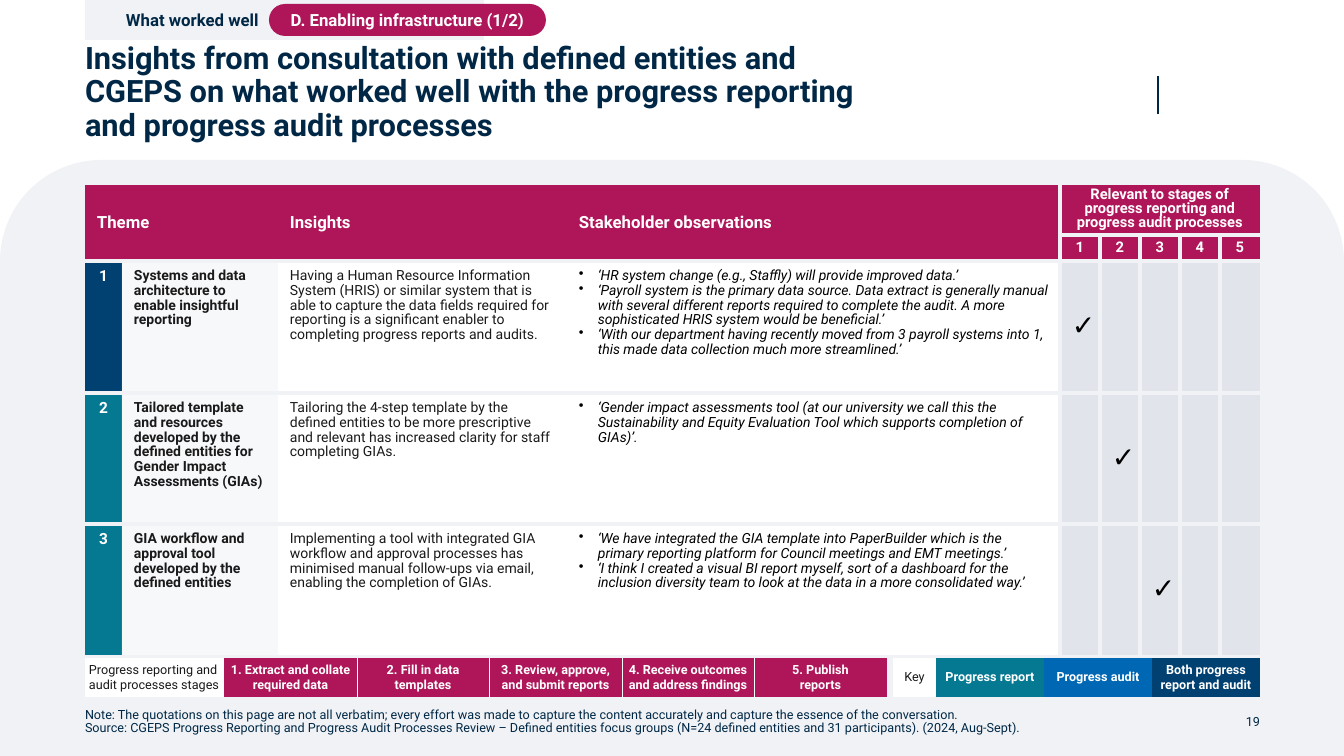
from dataclasses import dataclass

from lxml import etree
from pptx import Presentation
from pptx.dml.color import RGBColor
from pptx.enum.shapes import MSO_CONNECTOR, MSO_SHAPE
from pptx.enum.text import MSO_ANCHOR, MSO_AUTO_SIZE, PP_ALIGN
from pptx.oxml.ns import qn
from pptx.util import Emu, Pt

LEFT, CENTER, RIGHT = PP_ALIGN.LEFT, PP_ALIGN.CENTER, PP_ALIGN.RIGHT
TOP, MIDDLE = MSO_ANCHOR.TOP, MSO_ANCHOR.MIDDLE
RECT, PILL = MSO_SHAPE.RECTANGLE, MSO_SHAPE.ROUNDED_RECTANGLE
PANEL = MSO_SHAPE.ROUND_2_SAME_RECTANGLE
STRAIGHT = MSO_CONNECTOR.STRAIGHT
NO_FIT = MSO_AUTO_SIZE.NONE


@dataclass
class Theme:
    font: str = "Roboto"
    white: str = "FFFFFF"
    black: str = "000000"
    ink: str = "1A1A1A"
    heading: str = "002846"
    panel: str = "F0F2F5"
    stage: str = "E1E5EB"
    magenta: str = "AF165A"
    navy: str = "004172"
    teal: str = "057992"
    blue: str = "0067B4"
    title: float = 22
    tick: float = 20
    label: float = 12
    number: float = 11
    relevant: float = 10.5
    body: float = 10
    small: float = 9


def px(n):
    return Emu(round(n * 12192000 / 1344))


class Deck:
    def __init__(self, theme):
        self.t = theme
        self.prs = Presentation()
        self.prs.slide_width, self.prs.slide_height = px(1344), px(756)
        self.s = self.prs.slides.add_slide(self.prs.slide_layouts[1])

    def paint(self, fill, color):
        fill.solid()
        fill.fore_color.rgb = RGBColor.from_string(color)

    def text(self, tf, paras, size, color, bold=False, italic=False, align=LEFT,
             spacing=None, bullet=None, indent=0):
        for i, para in enumerate(paras):
            p = tf.paragraphs[0] if i == 0 else tf.add_paragraph()
            p.alignment, p.space_before = align, Pt(0)
            if spacing:
                p.line_spacing = spacing
            pPr = p._p.get_or_add_pPr()
            pPr.set("marL", str(px(indent)))
            pPr.set("indent", str(-px(indent) if bullet else 0))
            if bullet:
                etree.SubElement(pPr, qn("a:buChar")).set("char", bullet)
            else:
                etree.SubElement(pPr, qn("a:buNone"))
            for j, line in enumerate(para.split("\n")):
                if j:
                    p.add_line_break()
                r = p.add_run()
                r.text = line
                r.font.name, r.font.size = self.t.font, Pt(size)
                r.font.bold, r.font.italic = bold, italic
                r.font.color.rgb = RGBColor.from_string(color)

    def frame(self, tf, inset=(0, 0)):
        tf.word_wrap, tf.auto_size, tf.vertical_anchor = True, NO_FIT, MIDDLE
        tf.margin_left = tf.margin_right = px(inset[0])
        tf.margin_top = tf.margin_bottom = px(inset[1])
        return tf

    def placeholder(self, idx, box, text, size, bold=False):
        sp = self.s.placeholders[idx]
        sp.left, sp.top, sp.width, sp.height = map(px, box)
        self.s.shapes.element.append(sp.element)  # bring above the panel
        self.text(self.frame(sp.text_frame), [text], size, self.t.heading, bold, spacing=0.9)

    def textbox(self, box, text, size, color, **style):
        sp = self.s.shapes.add_textbox(*map(px, box))
        self.text(self.frame(sp.text_frame), [text], size, color, **style)

    def shape(self, kind, box, fill, adj=(), text=None, color=None, **style):
        sp = self.s.shapes.add_shape(kind, *map(px, box))
        sp.shadow.inherit = False
        self.paint(sp.fill, fill)
        sp.line.fill.background()
        for i, value in enumerate(adj):
            sp.adjustments[i] = value
        if text:
            self.text(self.frame(sp.text_frame, (10, 0)), [text], self.t.label, color,
                      bold=True, **style)

    def line(self, x1, y1, x2, y2, color, width):
        c = self.s.shapes.add_connector(STRAIGHT, *map(px, (x1, y1, x2, y2)))
        c.line.color.rgb = RGBColor.from_string(color)
        c.line.width = Pt(width)
        etree.SubElement(c.element.spPr, qn("a:effectLst"))

    def table(self, x, y, cols, rows):
        box = map(px, (x, y, sum(cols), sum(rows)))
        tbl = self.s.shapes.add_table(len(rows), len(cols), *box).table
        tbl.first_row = tbl.horz_banding = False
        for col, w in zip(tbl.columns, cols):
            col.width = px(w)
        for row, h in zip(tbl.rows, rows):
            row.height = px(h)
        return tbl

    def cell(self, cell, fill, paras=(), inset=(4, 4), anchor=MIDDLE, edges="",
             edge=("FFFFFF", 0.5), alpha=None, **style):
        tcPr = cell._tc.get_or_add_tcPr()
        for side in "LRTB":
            ln = etree.SubElement(tcPr, qn("a:ln" + side))
            if side in edges:
                ln.set("w", str(Pt(edge[1])))
                solid = etree.SubElement(ln, qn("a:solidFill"))
                etree.SubElement(solid, qn("a:srgbClr")).set("val", edge[0])
            else:
                etree.SubElement(ln, qn("a:noFill"))
        self.paint(cell.fill, fill)
        if alpha:
            clr = tcPr.find(qn("a:solidFill")).find(qn("a:srgbClr"))
            etree.SubElement(clr, qn("a:alpha")).set("val", str(alpha * 1000))
        cell.vertical_anchor = anchor
        cell.margin_left = cell.margin_right = px(inset[0])
        cell.margin_top = cell.margin_bottom = px(inset[1])
        if paras:
            self.text(cell.text_frame, paras, **style)


INSIGHTS = [  # theme, insight, observations, colour of the number
    ("Systems and data architecture to enable insightful reporting",
     "Having a Human Resource Information System (HRIS) or similar system that is able to capture "
     "the data fields required for reporting is a significant enabler to completing progress "
     "reports and audits.",
     ["‘HR system change (e.g., Staffly) will provide improved data.’",
      "‘Payroll system is the primary data source. Data extract is generally manual with several "
      "different reports required to complete the audit. A more sophisticated HRIS system would "
      "be beneficial.’",
      "‘With our department having recently moved from 3 payroll systems into 1, this made data "
      "collection much more streamlined.’"], "navy"),
    ("Tailored template and resources developed by the defined entities for Gender Impact "
     "Assessments (GIAs)",
     "Tailoring the 4-step template by the defined entities to be more prescriptive and relevant "
     "has increased clarity for staff completing GIAs.",
     ["‘Gender impact assessments tool (at our university we call this the Sustainability and "
      "Equity Evaluation Tool which supports completion of GIAs)’."], "teal"),
    ("GIA workflow and approval tool developed by the defined entities",
     "Implementing a tool with integrated GIA workflow and approval processes has minimised "
     "manual follow-ups via email, enabling the completion of GIAs.",
     ["‘We have integrated the GIA template into PaperBuilder which is the primary reporting "
      "platform for Council meetings and EMT meetings.’",
      "‘I think I created a visual BI report myself, sort of a dashboard for the inclusion "
      "diversity team to look at the data in a more consolidated way.’"], "teal"),
]
STAGES = [["1. Extract and collate required data"], ["2. Fill in data", "templates"],
          ["3. Review, approve, and submit reports"],
          ["4. Receive outcomes and address findings"], ["5. Publish\nreports"]]


def main():
    t = Theme()
    d = Deck(t)

    # Background panel, title and section tags
    d.shape(PANEL, (0, 160, 1344, 596), t.panel, adj=(0.17, 0))
    d.line(1158, 76, 1158, 114, t.heading, 1.5)
    d.placeholder(0, (85, 49, 793, 88), "Insights from consultation with defined entities and "
                  "CGEPS on what worked well with the progress reporting and progress audit "
                  "processes", t.title, bold=True)
    d.shape(RECT, (85, 0, 399, 40), t.panel, text="What worked well", color=t.heading, indent=31)
    d.shape(PILL, (269, 4, 277, 32), t.magenta, adj=(0.5,),
            text="D. Enabling infrastructure (1/2)", color=t.white, align=CENTER)

    # Insights table
    tbl = d.table(85, 185, [37, 156, 289, 493] + [40] * 5, [50, 26, 132, 131, 131])
    for r1, c1, r2, c2 in [(0, 0, 1, 1), (0, 2, 1, 2), (0, 3, 1, 3), (0, 4, 0, 8)]:
        tbl.cell(r1, c1).merge(tbl.cell(r2, c2))

    def put(row, col, fill, paras=(), inset=(12, 8), spacing=0.9, **style):
        cell = tbl.cell(row, col)
        edges = ("L" if col > 3 else "") + ("R" if 3 <= col <= 8 - cell.span_width else "")
        edges += ("T" if row else "") + ("B" if row < 4 else "")
        if paras:
            style["spacing"] = spacing
        d.cell(cell, fill, paras, inset, edges=edges, edge=(t.panel, 3), **style)

    head = dict(inset=(12, 4), color=t.white, bold=True)
    for col, name in [(0, "Theme"), (2, "Insights"), (3, "Stakeholder observations")]:
        put(0, col, t.magenta, [name], size=t.label, **head)
    head.update(size=t.relevant, align=CENTER)
    put(0, 4, t.magenta, ["Relevant to stages of progress reporting and progress audit processes"],
        spacing=Pt(10), **head)
    for n in range(1, 6):
        put(1, 3 + n, t.magenta, [str(n)], **head)

    for n, (theme, insight, observations, tint) in enumerate(INSIGHTS, 1):
        row = n + 1
        put(row, 0, getattr(t, tint), [str(n)], anchor=TOP, size=t.number, color=t.white,
            bold=True, align=CENTER)
        body = dict(anchor=TOP, size=t.body)
        put(row, 1, t.white, [theme], alpha=50, color=t.ink, bold=True, **body)
        put(row, 2, t.white, [insight], color=t.ink, **body)
        put(row, 3, t.white, observations, color=t.black, italic=True, bullet="•", indent=19,
            **body)
        for stage in range(1, 6):  # each insight ticks the stage of its own number
            put(row, 3 + stage, t.stage, ["✓"] if stage == n else (), size=t.tick, color=t.black,
                italic=True, align=CENTER)

    # Colour key and stages legend
    plain = dict(size=t.small, color=t.ink)
    strong = dict(size=t.small, color=t.white, bold=True, align=CENTER)
    key = d.table(893, 658, [43, 108, 108, 108], [39])
    d.cell(key.cell(0, 0), t.white, ["Key"], align=CENTER, **plain)
    for col, (name, fill) in enumerate([("Progress report", t.teal), ("Progress audit", t.blue),
                                        ("Both progress report and audit", t.navy)], 1):
        d.cell(key.cell(0, col), fill, [name], **strong)

    legend = d.table(85, 658, [139, 133, 132, 133, 132, 133], [39])
    d.cell(legend.cell(0, 0), t.white, ["Progress reporting and audit processes stages"], **plain)
    for col, paras in enumerate(STAGES, 1):
        edges = ("L" if col > 1 else "") + ("R" if col < len(STAGES) else "")
        d.cell(legend.cell(0, col), t.magenta, paras, edges=edges, **strong)

    # Footnote and page number
    d.placeholder(1, (85, 708, 1071, 28), "Note: The quotations on this page are not all verbatim; "
                  "every effort was made to capture the content accurately and capture the essence "
                  "of the conversation.\nSource: CGEPS Progress Reporting and Progress Audit "
                  "Processes Review – Defined entities focus groups (N=24 defined entities and 31 "
                  "participants). (2024, Aug-Sept).", t.small)
    d.textbox((1180, 708, 80, 28), "19", t.small, t.heading, align=RIGHT)

    d.prs.save("out.pptx")


if __name__ == "__main__":
    main()
